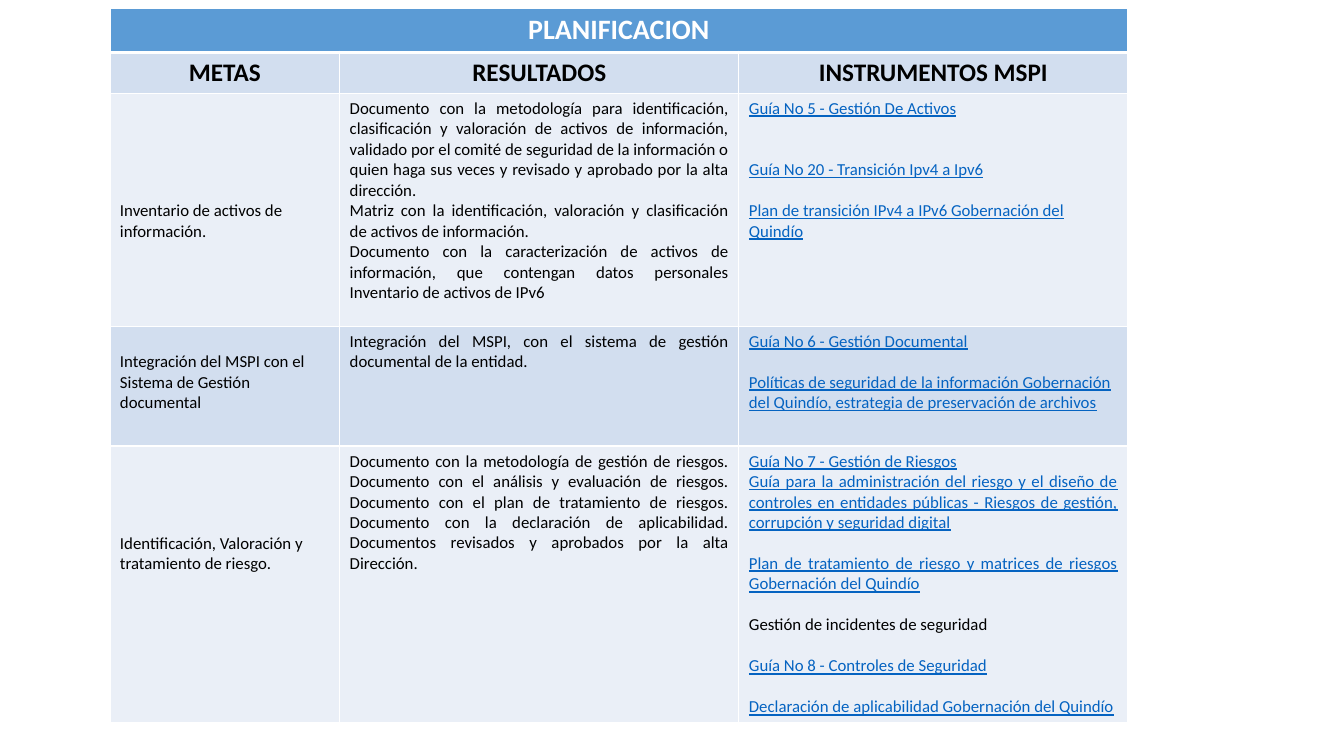
from dataclasses import dataclass

from lxml import etree
from pptx import Presentation
from pptx import util as u
from pptx.dml.color import RGBColor
from pptx.enum import text
from pptx.oxml.ns import qn

LEFT, CENTER, JUSTIFY = (text.PP_ALIGN.LEFT, text.PP_ALIGN.CENTER,
                         text.PP_ALIGN.JUSTIFY)


@dataclass(frozen=True)
class Theme:
    font: str = "Calibri"
    title_size: int = 20
    heading_size: int = 18
    body_size: int = 12
    white: str = "FFFFFF"
    black: str = "000000"
    link: str = "0563C1"
    title_fill: str = "5B9BD5"
    dark_band: str = "D2DEEF"
    light_band: str = "EAEFF7"
    border: int = 1
    title_border: int = 3


@dataclass(frozen=True)
class Item:
    words: str
    link: bool = True
    blank_lines: int = 0


THEME = Theme()
LINE = 14.65
COLUMNS = (5.79, 10.06, 9.8)
ROWS = (1.12, 1.02, 5.87, 3.02, 6.93)
HEADINGS = ("METAS", "RESULTADOS", "INSTRUMENTOS MSPI")

GOALS = [
    ("Inventario de activos de información.", 5,
     ["Documento con la metodología para identificación, clasificación y valoración "
      "de activos de información, validado por el comité de seguridad de la "
      "información o quien haga sus veces y revisado y aprobado por la alta dirección.",
      "Matriz con la identificación, valoración y clasificación de activos de "
      "información.",
      "Documento con la caracterización de activos de información, que contengan "
      "datos personales\vInventario de activos de IPv6"],
     LEFT,
     [Item("Guía No 5 - Gestión De Activos"),
      Item("Guía No 20 - Transición Ipv4 a Ipv6", blank_lines=2),
      Item("Plan de transición IPv4 a IPv6 Gobernación del Quindío", blank_lines=1)]),
    ("Integración del MSPI con el Sistema de Gestión documental", 1,
     ["Integración del MSPI, con el sistema de gestión documental de la entidad."],
     LEFT,
     [Item("Guía No 6 - Gestión Documental"),
      Item("Políticas de seguridad de la información Gobernación del Quindío, "
           "estrategia de preservación de archivos", blank_lines=1)]),
    ("Identificación, Valoración y tratamiento de riesgo.", 4,
     ["Documento con la metodología de gestión de riesgos. Documento con el análisis "
      "y evaluación de riesgos. Documento con el plan de tratamiento de riesgos. "
      "Documento con la declaración de aplicabilidad. Documentos revisados y "
      "aprobados por la alta Dirección."],
     JUSTIFY,
     [Item("Guía No 7 - Gestión de Riesgos"),
      Item("Guía para la administración del riesgo y el diseño de controles en "
           "entidades públicas - Riesgos de gestión, corrupción y seguridad digital"),
      Item("Plan de tratamiento de riesgo y matrices de riesgos Gobernación del "
           "Quindío", blank_lines=1),
      Item("Gestión de incidentes de seguridad", link=False, blank_lines=1),
      Item("Guía No 8 - Controles de Seguridad", blank_lines=1),
      Item("Declaración de aplicabilidad Gobernación del Quindío", blank_lines=1)]),
]


def set_borders(cell, top=THEME.border, bottom=THEME.border):
    tcPr = cell._tc.get_or_add_tcPr()
    widths = {"L": THEME.border, "R": THEME.border, "T": top, "B": bottom}
    for side, width in widths.items():
        ln = etree.SubElement(tcPr, qn(f"a:ln{side}"), w=str(u.Pt(width)))
        fill = etree.SubElement(ln, qn("a:solidFill"))
        etree.SubElement(fill, qn("a:srgbClr"), val=THEME.white)


def paint(cell, color, **borders):
    set_borders(cell, **borders)
    cell.fill.solid()
    cell.fill.fore_color.rgb = RGBColor.from_string(color)


def write(p, words, size, align, color=THEME.black, bold=False, underline=False):
    p.text = words
    p.alignment = align
    p.font.name = THEME.font
    p.font.size = u.Pt(size)
    p.font.bold = bold
    p.font.underline = underline
    p.font.color.rgb = RGBColor.from_string(color)


def write_items(cell, items, align):
    tf = cell.text_frame
    for i, item in enumerate(items):
        p = tf.add_paragraph() if i else tf.paragraphs[0]
        write(p, item.words, THEME.body_size, align,
              color=THEME.link if item.link else THEME.black, underline=item.link)
        if item.blank_lines:
            p.space_before = u.Pt(item.blank_lines * LINE)


def add_plan_table(s):
    frame = s.shapes.add_table(len(ROWS), len(COLUMNS), u.Cm(2.77), u.Cm(0.2),
                               u.Cm(sum(COLUMNS)), u.Cm(sum(ROWS)))
    table = frame.table
    for column, width in zip(table.columns, COLUMNS):
        column.width = u.Cm(width)
    for row, height in zip(table.rows, ROWS):
        row.height = u.Cm(height)
    return table


def fill_headers(table):
    title = table.cell(0, 0)
    title.merge(table.cell(0, len(COLUMNS) - 1))
    for cell in table.rows[0].cells:
        paint(cell, THEME.title_fill, bottom=THEME.title_border)
    write(title.text_frame.paragraphs[0], "PLANIFICACION", THEME.title_size, CENTER,
          color=THEME.white, bold=True)
    for cell, heading in zip(table.rows[1].cells, HEADINGS):
        paint(cell, THEME.dark_band, top=THEME.title_border)
        write(cell.text_frame.paragraphs[0], heading, THEME.heading_size, CENTER,
              bold=True)


def fill_goals(table):
    for i, (goal, lines_above, results, align, tools) in enumerate(GOALS):
        cells = [table.cell(i + 2, j) for j in range(len(COLUMNS))]
        for cell in cells:
            paint(cell, THEME.dark_band if i % 2 else THEME.light_band)
        cells[0].margin_top = u.Cm(0.13) + u.Pt(lines_above * LINE)
        write_items(cells[0], [Item(goal, link=False)], LEFT)
        write_items(cells[1], [Item(words, link=False) for words in results], JUSTIFY)
        write_items(cells[2], tools, align)


def main():
    prs = Presentation()
    prs.slide_width, prs.slide_height = u.Cm(33.87), u.Cm(19.05)
    s = prs.slides.add_slide(prs.slide_layouts[6])
    table = add_plan_table(s)
    fill_headers(table)
    fill_goals(table)
    prs.save("out.pptx")


if __name__ == "__main__":
    main()
